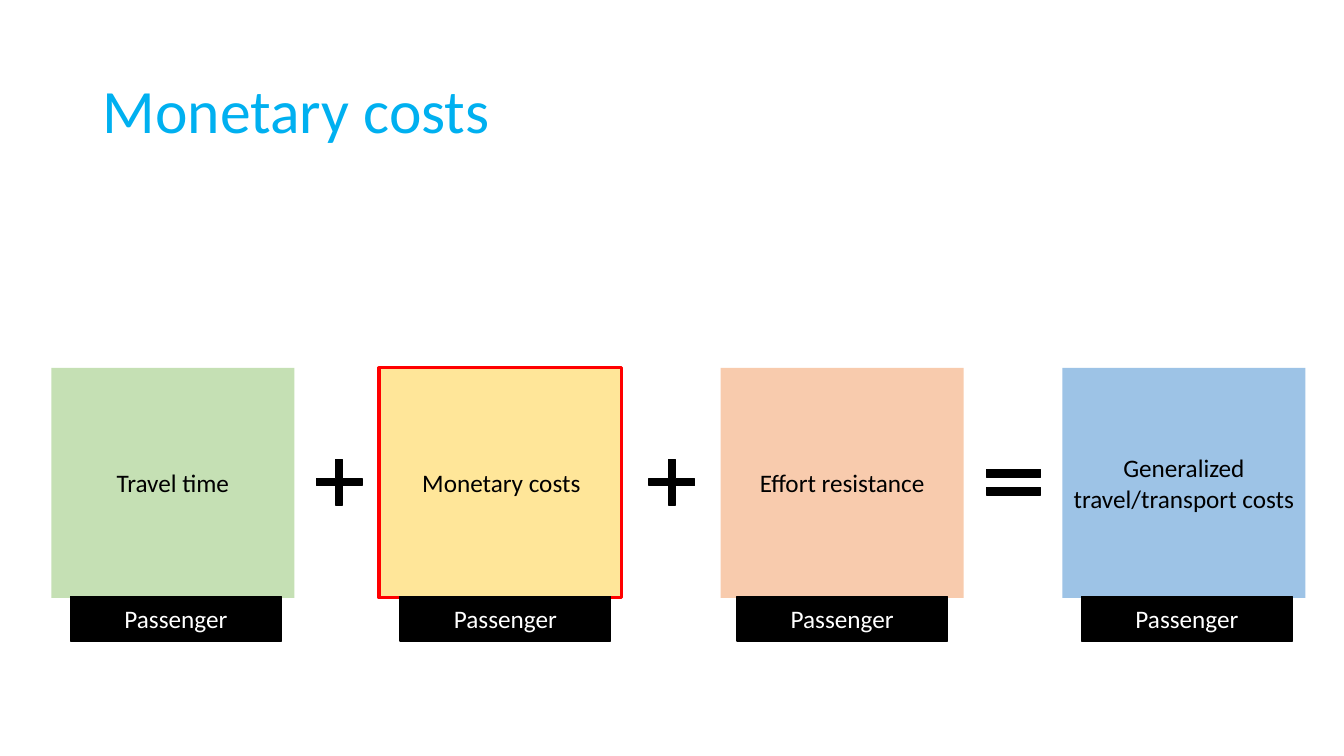
import pptx
import pptx.util
import pptx.dml.color
import pptx.enum.shapes
import pptx.enum.text

Pt = pptx.util.Pt
RGB = pptx.dml.color.RGBColor
Shape = pptx.enum.shapes.MSO_SHAPE
Align = pptx.enum.text.PP_ALIGN
Anchor = pptx.enum.text.MSO_ANCHOR

BLACK = RGB(0x00, 0x00, 0x00)
WHITE = RGB(0xFF, 0xFF, 0xFF)
SKY = RGB(0x00, 0xB0, 0xF0)
RED = RGB(0xFF, 0x00, 0x00)
GREEN = RGB(0xC5, 0xE0, 0xB4)
YELLOW = RGB(0xFF, 0xE6, 0x99)
PEACH = RGB(0xF8, 0xCB, 0xAD)
BLUE = RGB(0x9D, 0xC3, 0xE6)

TITLE = "Monetary costs"
CAPTION = "Passenger"
COSTS = [
    ("Travel time", GREEN, 36.7, 50.4),
    ("Monetary costs", YELLOW, 271.4, 285.8),
    ("Effort resistance", PEACH, 514.8, 526.3),
    ("Generalized travel/transport costs", BLUE, 758.9, 772.6),
]
OPERATORS = [
    (Shape.CROSS, 226.1, 32.4, 32.4, [0.423]),
    (Shape.CROSS, 463.7, 32.4, 32.4, [0.423]),
    (Shape.MATH_EQUAL, 697.7, 52.6, 38.2, [0.149, 0.187]),
]
BOX_TOP, BOX_WIDTH, BOX_HEIGHT = 262.8, 173.5, 164.2
CAPTION_TOP, CAPTION_WIDTH, CAPTION_HEIGHT = 426.2, 150.5, 31.7
OPERATOR_MIDDLE = 344.5
FRAME_LEFT = 270.7


def write(frame, text, size, color, align, spacing=1.0):
    frame.word_wrap = True
    frame.vertical_anchor = Anchor.MIDDLE
    para = frame.paragraphs[0]
    para.alignment = align
    para.line_spacing = spacing
    span = para.add_run()
    span.text = text
    for name, value in {"name": "Calibri", "size": Pt(size)}.items():
        setattr(span.font, name, value)
    span.font.color.rgb = color


def add_block(page, kind, place, fill=None, line=None, weight=1):
    block = page.shapes.add_shape(kind, *map(Pt, place))
    block.shadow.inherit = False
    for part, color in ((block.fill, fill), (block.line.fill, line)):
        if color is None:
            part.background()
        else:
            part.solid()
            part.fore_color.rgb = color
    if line is not None:
        block.line.width = Pt(weight)
    return block


def main():
    deck = pptx.Presentation()
    deck.slide_width, deck.slide_height = Pt(960), Pt(540)
    page = deck.slides.add_slide(deck.slide_layouts[5])

    title = page.shapes.title
    place = {"left": 66.2, "top": 28.8, "width": 828, "height": 104.4}
    for name, value in place.items():
        setattr(title, name, Pt(value))
    write(title.text_frame, TITLE, 44, SKY, Align.LEFT, 0.9)

    for text, color, left, _ in COSTS:
        box = add_block(page, Shape.RECTANGLE, (left, BOX_TOP, BOX_WIDTH, BOX_HEIGHT), color)
        write(box.text_frame, text, 18, BLACK, Align.CENTER)

    for kind, left, width, height, adjustments in OPERATORS:
        place = (left, OPERATOR_MIDDLE - height / 2, width, height)
        operator = add_block(page, kind, place, BLACK, BLACK)
        for index, value in enumerate(adjustments):
            operator.adjustments[index] = value

    add_block(page, Shape.RECTANGLE, (FRAME_LEFT, BOX_TOP, BOX_WIDTH, BOX_HEIGHT),
              line=RED, weight=2.25)

    for _, _, _, left in COSTS:
        place = (left, CAPTION_TOP, CAPTION_WIDTH, CAPTION_HEIGHT)
        label = add_block(page, Shape.RECTANGLE, place, BLACK, BLACK)
        write(label.text_frame, CAPTION, 18, WHITE, Align.CENTER)

    deck.save("out.pptx")


if __name__ == "__main__":
    main()
